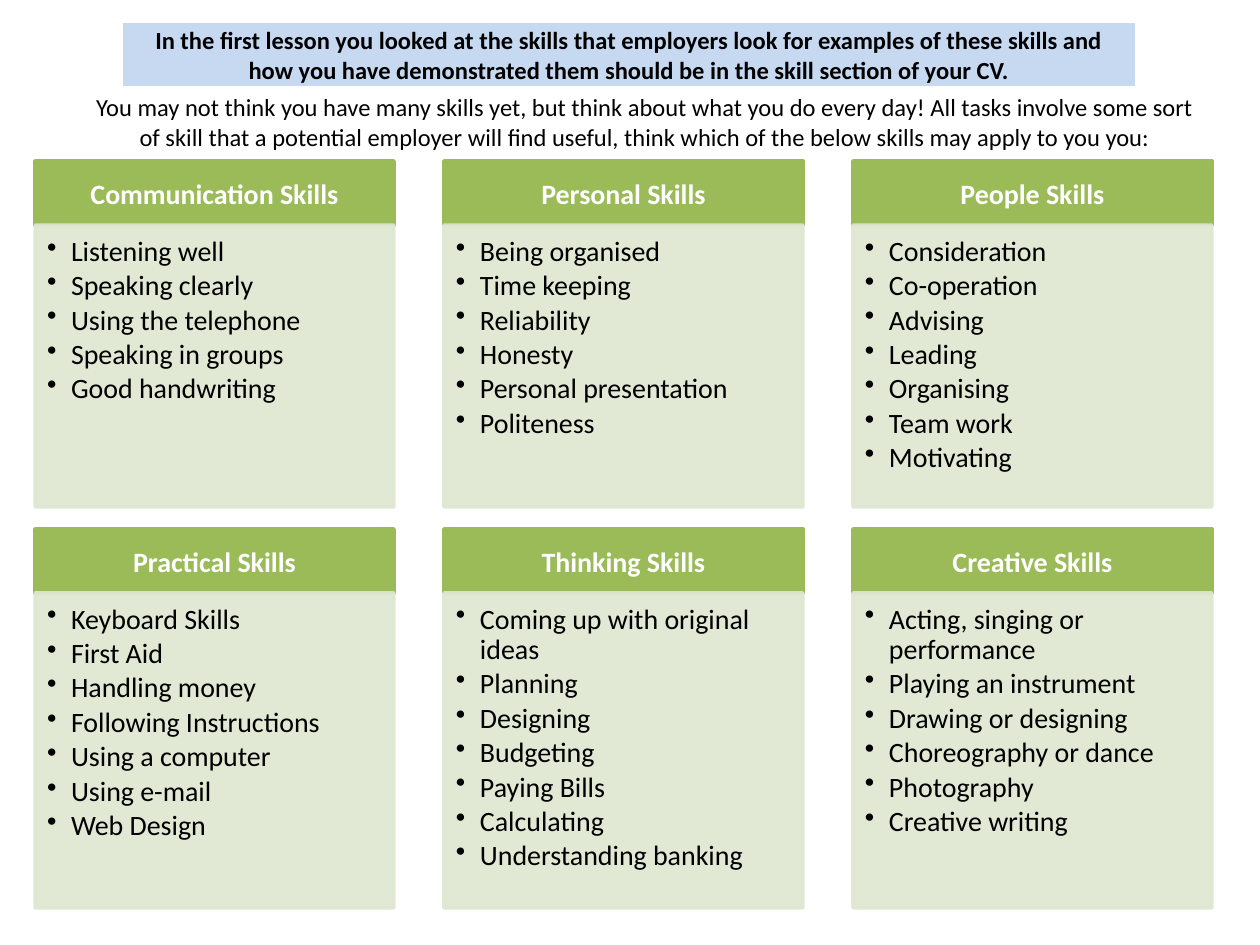
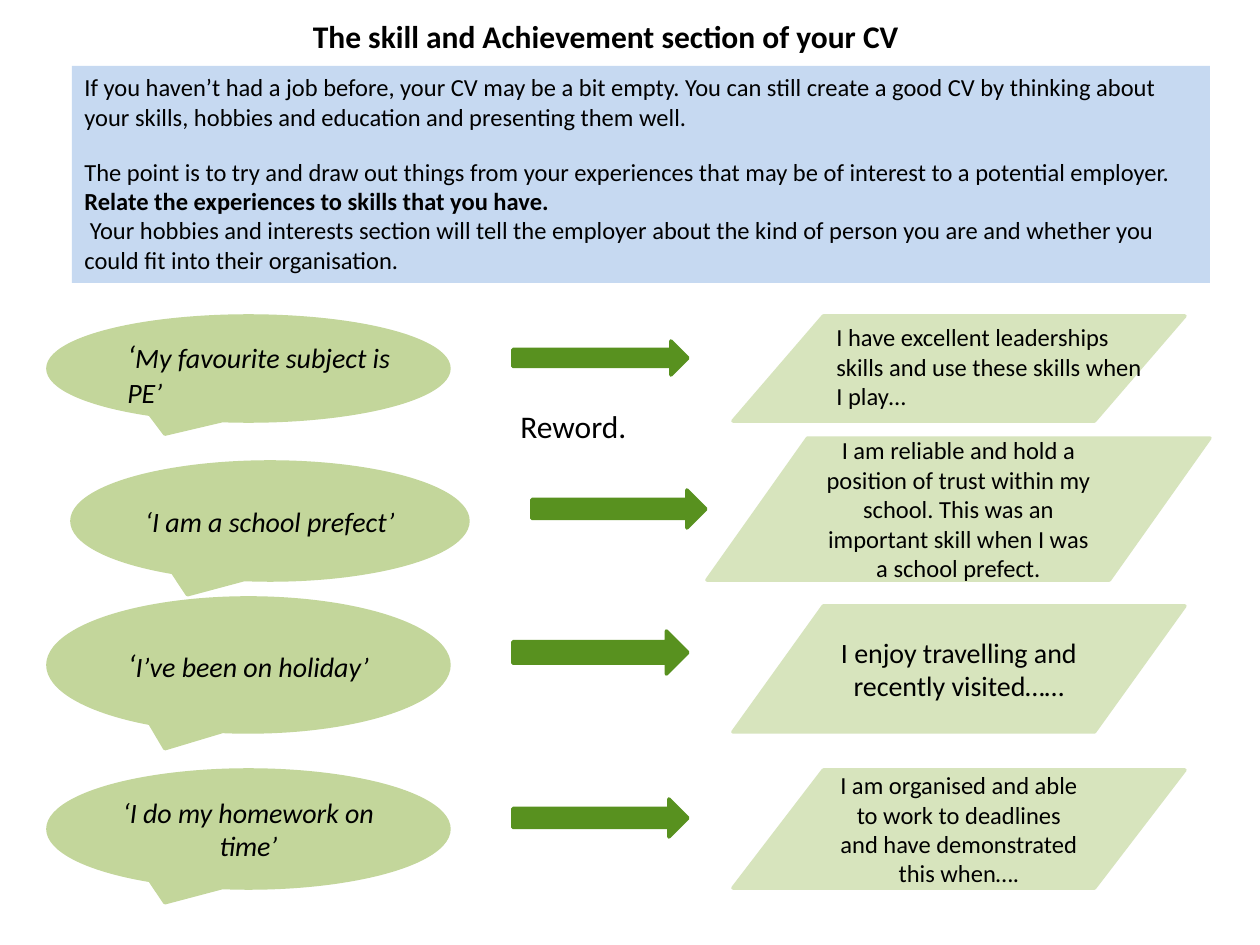
from dataclasses import dataclass

import pptx
import pptx.dml.color
import pptx.enum.shapes
import pptx.enum.text
import pptx.oxml
import pptx.oxml.ns
import pptx.util

SHAPES = pptx.enum.shapes.MSO_SHAPE
ALIGN = pptx.enum.text.PP_ALIGN
ANCHOR = pptx.enum.text.MSO_ANCHOR
PX_PER_INCH = 126
TITLE_ONLY = 5


@dataclass(frozen=True)
class Theme:
    font: str = "Calibri"
    text: str = "000000"
    header_text: str = "FFFFFF"
    panel: str = "C6D9F1"
    card_header: str = "9BBB59"
    card_body: str = "DEE7D1"
    card_body_opacity: int = 90
    callout: str = "C3D69B"
    arrow: str = "58911F"
    rewording: str = "D7E4BD"
    small: int = 14
    medium: int = 16
    large: int = 18
    outline: int = 2


THEME = Theme()

# Skills slide
SKILLS_TITLE = (
    "In the first lesson you looked at the skills that employers look for examples of these "
    "skills and how you have demonstrated them should be in the skill section of your CV."
)
SKILLS_INTRO = (
    "You may not think you have many skills yet, but think about what you do every day! "
    "All tasks involve some sort of skill that a potential employer will find useful, "
    "think which of the below skills may apply to you you:"
)
SKILL_ROWS = [
    {
        "Communication Skills": ["Listening well", "Speaking clearly", "Using the telephone",
                                 "Speaking in groups", "Good handwriting"],
        "Personal Skills": ["Being organised", "Time keeping", "Reliability", "Honesty",
                            "Personal presentation", "Politeness"],
        "People Skills": ["Consideration", "Co-operation", "Advising", "Leading",
                          "Organising", "Team work", "Motivating"],
    },
    {
        "Practical Skills": ["Keyboard Skills", "First Aid", "Handling money",
                             "Following Instructions", "Using a computer", "Using e-mail",
                             "Web Design"],
        "Thinking Skills": ["Coming up with original ideas", "Planning", "Designing",
                            "Budgeting", "Paying Bills", "Calculating",
                            "Understanding banking"],
        "Creative Skills": ["Acting, singing or performance", "Playing an instrument",
                            "Drawing or designing", "Choreography or dance", "Photography",
                            "Creative writing"],
    },
]
ROW_TOPS_AND_BODY_HEIGHTS = [(161, 282), (529, 315)]
CARD_LEFT, CARD_PITCH, CARD_WIDTH, HEADER_HEIGHT = 35, 409, 359, 64

# Achievement slide
ACHIEVEMENT_TITLE = "The skill and Achievement section of your CV"
# (text, bold, space before in points)
ADVICE = [
    ("If you haven’t had a job before, your CV may be a bit empty. You can still create a good "
     "CV by thinking about your skills, hobbies and education and presenting them well.",
     False, 0),
    ("The point is to try and draw out things from your experiences that may be of interest "
     "to a potential employer.", False, 14.6),
    ("Relate the experiences to skills that you have.", True, 0),
    (" Your hobbies and interests section will tell the employer about the kind of person you "
     "are and whether you could fit into their organisation.", False, 0),
]
# Left and width of the callout, arrow and rewording columns
COLUMNS = [(48, 401), (513, 175), (733, 452)]
SHIFTED_COLUMNS = [(72, 396), (532, 174), (707, 503)]


@dataclass(frozen=True)
class Example:
    """Texts of one row, with the (top, height) of its callout, arrow and rewording."""
    quote: str
    rewording: str
    spans: list
    columns: list
    quote_mark_size: int = THEME.medium
    rewording_size: int = THEME.small
    quote_box: tuple = ()
    rewording_box: tuple = ()


EXAMPLES = [
    Example("‘My favourite subject is PE’",
            "I have excellent leaderships skills and use these skills when I play…",
            [(316, 105), (341, 34), (316, 105)], COLUMNS, quote_mark_size=THEME.large,
            quote_box=(115, 331, 291, 84), rewording_box=(824, 316, 338, 102)),
    Example("‘I am a school prefect’",
            "I am reliable and hold a position of trust within my school. "
            "This was an important skill when I was a school prefect.",
            [(462, 118), (490, 38), (438, 142)], SHIFTED_COLUMNS),
    Example("‘I’ve been on holiday’", "I enjoy travelling and recently visited……",
            [(598, 134), (631, 43), (606, 126)], COLUMNS,
            quote_mark_size=THEME.large, rewording_size=THEME.medium),
    Example("‘I do my homework on time’",
            "I am organised and able to work to deadlines and have demonstrated this when….",
            [(770, 118), (799, 38), (770, 118)], COLUMNS),
]


def px(length):
    return pptx.util.Emu(round(length * 914400 / PX_PER_INCH))


def rgb(colour):
    return pptx.dml.color.RGBColor.from_string(colour)


def add_box(slide, kind, box, colour, outlined=True):
    shape = slide.shapes.add_shape(kind, *map(px, box))
    shape.shadow.inherit = False
    shape.fill.solid()
    shape.fill.fore_color.rgb = rgb(colour)
    if outlined:
        shape.line.color.rgb = rgb(colour)
        shape.line.width = pptx.util.Pt(THEME.outline)
    else:
        shape.line.fill.background()
    shape.text_frame.vertical_anchor = ANCHOR.MIDDLE
    return shape


def add_text_box(slide, box, wrap=True):
    text_box = slide.shapes.add_textbox(*map(px, box))
    text_box.text_frame.word_wrap = wrap
    return text_box


def set_opacity(shape, percent):
    for colour in shape.element.spPr.iter(pptx.oxml.ns.qn("a:srgbClr")):
        alpha = colour.makeelement(pptx.oxml.ns.qn("a:alpha"), {"val": str(percent * 1000)})
        colour.append(alpha)


def set_margins(frame, *margins):
    frame.margin_left, frame.margin_top, frame.margin_right, frame.margin_bottom = map(px, margins)


def format_paragraph(paragraph, size, align=ALIGN.CENTER, bold=False, italic=False,
                     colour=THEME.text):
    paragraph.alignment = align
    font = paragraph.font
    font.name, font.size = THEME.font, pptx.util.Pt(size)
    font.bold, font.italic = bold, italic
    font.color.rgb = rgb(colour)


def write(shape, text, size, **style):
    shape.text_frame.text = text
    format_paragraph(shape.text_frame.paragraphs[0], size, **style)


def fill_paragraphs(frame, texts):
    """Put one text in each paragraph and return the paragraphs."""
    frame.text = "\n".join(texts)
    return frame.paragraphs


def add_bullet(paragraph, indent):
    properties = paragraph._p.get_or_add_pPr()
    properties.set("marL", str(indent))
    properties.set("indent", str(-indent))
    bullet = properties.makeelement(pptx.oxml.ns.qn("a:buChar"), {"char": "•"})
    properties.append(bullet)


def add_titled_slide(presentation, title, box, size):
    slide = presentation.slides.add_slide(presentation.slide_layouts[TITLE_ONLY])
    shape = slide.shapes.title
    shape.left, shape.top, shape.width, shape.height = map(px, box)
    shape.text_frame.auto_size = pptx.enum.text.MSO_AUTO_SIZE.NONE
    shape.text_frame.vertical_anchor = ANCHOR.MIDDLE
    write(shape, title, size, bold=True)
    return slide


def add_skill_card(slide, left, top, body_height, heading, skills):
    header = add_box(slide, SHAPES.RECTANGLE, (left, top, CARD_WIDTH, HEADER_HEIGHT),
                     THEME.card_header)
    write(header, heading, THEME.medium, bold=True, colour=THEME.header_text)

    body = add_box(slide, SHAPES.RECTANGLE,
                   (left, top + HEADER_HEIGHT, CARD_WIDTH, body_height), THEME.card_body)
    set_opacity(body, THEME.card_body_opacity)
    frame = body.text_frame
    frame.vertical_anchor = ANCHOR.TOP
    set_margins(frame, 12, 12, 15, 18)
    for paragraph in fill_paragraphs(frame, skills):
        add_bullet(paragraph, px(24))
        format_paragraph(paragraph, THEME.medium, align=ALIGN.LEFT)
        paragraph.line_spacing = 0.9
        paragraph.space_after = pptx.util.Pt(2.4)


def build_skills_slide(presentation):
    slide = add_titled_slide(presentation, SKILLS_TITLE, (123, 23, 1012, 63), THEME.small)
    slide.shapes.title.fill.solid()
    slide.shapes.title.fill.fore_color.rgb = rgb(THEME.panel)
    write(add_text_box(slide, (74, 86, 1142, 72)), SKILLS_INTRO, THEME.small)
    for cards, (top, body_height) in zip(SKILL_ROWS, ROW_TOPS_AND_BODY_HEIGHTS):
        for column, (heading, skills) in enumerate(cards.items()):
            add_skill_card(slide, CARD_LEFT + column * CARD_PITCH, top, body_height,
                           heading, skills)


def write_quote(shape, example, align):
    write(shape, example.quote[0], THEME.medium, align=align, italic=True)
    paragraph = shape.text_frame.paragraphs[0]
    paragraph.runs[0].font.size = pptx.util.Pt(example.quote_mark_size)
    paragraph.add_run().text = example.quote[1:]


def add_example(slide, example):
    kinds = (SHAPES.OVAL_CALLOUT, SHAPES.RIGHT_ARROW, SHAPES.FLOWCHART_DATA)
    colours = (THEME.callout, THEME.arrow, THEME.rewording)
    callout, _, rewording = [
        add_box(slide, kind, (left, top, width, height), colour)
        for kind, colour, (left, width), (top, height)
        in zip(kinds, colours, example.columns, example.spans)
    ]
    align = ALIGN.CENTER
    if example.quote_box:
        callout = add_text_box(slide, example.quote_box)
        rewording = add_text_box(slide, example.rewording_box)
        align = ALIGN.LEFT
    write_quote(callout, example, align)
    write(rewording, example.rewording, example.rewording_size, align=align)


def build_achievement_slide(presentation):
    slide = add_titled_slide(presentation, ACHIEVEMENT_TITLE, (0, 0, 1212, 71), THEME.large)
    panel = add_box(slide, SHAPES.RECTANGLE, (72, 66, 1138, 217), THEME.panel, outlined=False)
    panel.text_frame.vertical_anchor = ANCHOR.TOP
    paragraphs = fill_paragraphs(panel.text_frame, [text for text, _, _ in ADVICE])
    for paragraph, (_, bold, space_before) in zip(paragraphs, ADVICE):
        format_paragraph(paragraph, THEME.small, align=ALIGN.LEFT, bold=bold)
        paragraph.space_before = pptx.util.Pt(space_before)
    for example in EXAMPLES:
        add_example(slide, example)
    write(add_text_box(slide, (508, 401, 132, 50), wrap=False), "Reword.", THEME.large,
          align=ALIGN.LEFT)


def main():
    presentation = pptx.Presentation()
    presentation.slide_width, presentation.slide_height = px(1260), px(945)
    build_skills_slide(presentation)
    build_achievement_slide(presentation)
    presentation.save("out.pptx")


if __name__ == "__main__":
    main()
